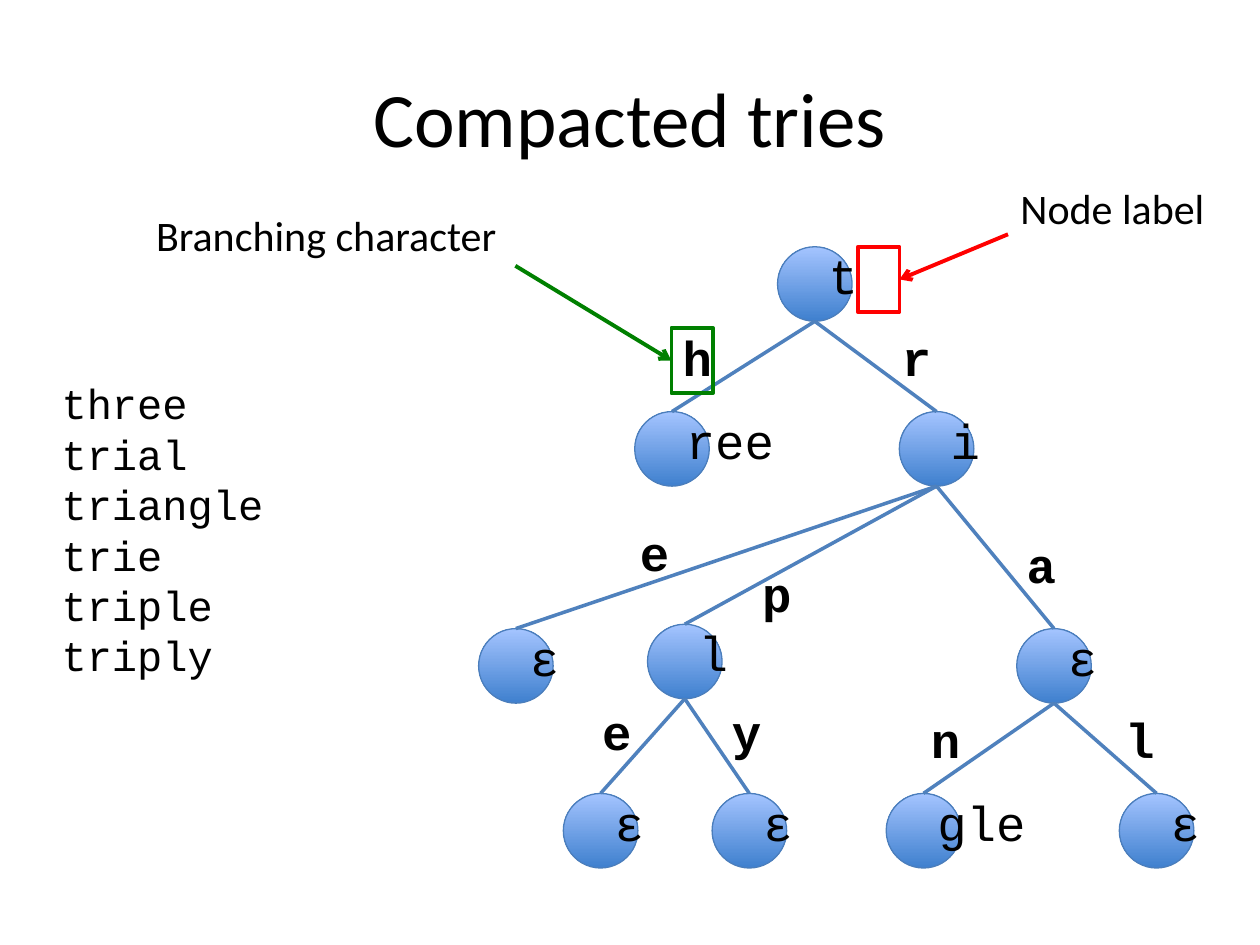
from lxml import etree
from pptx import Presentation
from pptx import util as u
from pptx.dml.color import RGBColor
from pptx.enum import shapes, text
from pptx.oxml import ns

Pt = u.Pt


class Theme:
    ink = RGBColor(0x00, 0x00, 0x00)
    edge = RGBColor(0x4F, 0x81, 0xBD)
    rim = RGBColor(0x4B, 0x7E, 0xBC)
    node_dark = RGBColor(0x3F, 0x80, 0xCE)
    node_light = RGBColor(0xA4, 0xC4, 0xFF)
    red = RGBColor(0xFF, 0x00, 0x00)
    green = RGBColor(0x00, 0x80, 0x00)
    sans, mono = "Calibri", "Courier New"
    title_size, key_size, note_size = 44, 28, 24


def write(frame, lines, font, size, bold=False, align=text.PP_ALIGN.LEFT):
    for index, line in enumerate(lines):
        paragraph = frame.add_paragraph() if index else frame.paragraphs[0]
        paragraph.alignment = align
        run = paragraph.add_run()
        run.text = line
        run.font.name = font
        run.font.size = Pt(size)
        run.font.bold = bold
        run.font.color.rgb = Theme.ink


def draw_line(parent, start, end, color, width):
    line = parent.add_connector(shapes.MSO_CONNECTOR.STRAIGHT, *map(Pt, start + end))
    line.line.color.rgb = color
    line.line.width = Pt(width)
    etree.SubElement(line._element.spPr, ns.qn("a:effectLst"))
    return line


deck = Presentation()
deck.slide_width, deck.slide_height = Pt(720), Pt(540)
slide = deck.slides.add_slide(deck.slide_layouts[5])

title = slide.shapes.title
title.left, title.top, title.width, title.height = Pt(36), Pt(21.6), Pt(648), Pt(90)
title.text_frame.vertical_anchor = text.MSO_ANCHOR.MIDDLE
write(title.text_frame, ["Compacted tries"], Theme.sans, Theme.title_size,
      align=text.PP_ALIGN.CENTER)

words = slide.shapes.add_textbox(Pt(28.1), Pt(212.4), Pt(157.7), Pt(181.4)).text_frame
words.word_wrap = True
words.auto_size = text.MSO_AUTO_SIZE.SHAPE_TO_FIT_TEXT
write(words, ["three", "trial", "triangle", "trie", "triple", "triply"],
      Theme.mono, Theme.note_size)

diameter = 42.6
trie = {
    "t": ("t", 444.3, 141),
    "tri": ("i", 513.9, 235.2),
    "three": ("ree", 362.7, 235.2),
    "tria": ("ε", 581, 359.2),
    "trie": ("ε", 273.5, 359.2),
    "tripl": ("l", 370, 356.7),
    "triply": ("ε", 406.9, 453.4),
    "triple": ("ε", 321.9, 453.4),
    "trial": ("ε", 639.6, 453.4),
    "triangle": ("gle", 506.4, 453.4),
}
nodes = {}
for prefix, (label, left, top) in trie.items():
    node = slide.shapes.add_shape(shapes.MSO_SHAPE.OVAL, Pt(left), Pt(top),
                                  Pt(diameter), Pt(diameter))
    node.shadow.inherit = False
    node.fill.gradient()
    node.fill.gradient_angle = 90
    for stop, color, position in zip(node.fill.gradient_stops,
                                     (Theme.node_dark, Theme.node_light), (0, 1)):
        stop.color.rgb = color
        stop.position = position
    node.line.color.rgb = Theme.rim
    node.line.width = Pt(0.75)
    frame = node.text_frame
    frame.word_wrap = False
    frame.vertical_anchor = text.MSO_ANCHOR.BOTTOM
    frame.margin_left, frame.margin_top = Pt(62.6), Pt(2.9)
    frame.margin_right, frame.margin_bottom = Pt(7.2), Pt(3.6)
    write(frame, [label], Theme.mono, Theme.key_size)
    nodes[prefix] = node

branches = [
    ("t", "three", "h", 383, 183.6),
    ("t", "tri", "r", 508.3, 183.6),
    ("tri", "trie", "e", 358.6, 295.2),
    ("tri", "tripl", "p", 428.4, 318.2),
    ("tri", "tria", "a", 579.6, 301.7),
    ("tria", "trial", "l", 635.8, 401.8),
    ("tria", "triangle", "n", 524.9, 401.8),
    ("tripl", "triply", "y", 411.1, 397.4),
    ("tripl", "triple", "e", 337, 397.4),
]
for parent, child, character, left, top in branches:
    _, parent_left, parent_top = trie[parent]
    _, child_left, child_top = trie[child]
    edge = draw_line(slide.shapes,
                     (parent_left + diameter / 2, parent_top + diameter),
                     (child_left + diameter / 2, child_top), Theme.edge, 2)
    edge.end_connect(nodes[child], 0)

for parent, child, character, left, top in branches:
    frame = slide.shapes.add_textbox(Pt(left), Pt(top), Pt(31.7), Pt(41.2)).text_frame
    frame.word_wrap = False
    frame.auto_size = text.MSO_AUTO_SIZE.SHAPE_TO_FIT_TEXT
    write(frame, [character], Theme.mono, Theme.key_size, bold=True)

marker_width, marker_height = 23.8, 37.4
callouts = [
    ("Node label", Theme.red, (490.2, 141), (576, 133.9), 3, (576, 100.8, 121)),
    ("Branching character", Theme.green, (383.6, 187.3), (294.5, 151.9), 1,
     (82.1, 115.9, 212.4)),
]
for caption, color, (left, top), start, side, (note_left, note_top, note_width) in callouts:
    callout = slide.shapes.add_group_shape().shapes
    marker = callout.add_shape(shapes.MSO_SHAPE.RECTANGLE, Pt(left), Pt(top),
                               Pt(marker_width), Pt(marker_height))
    marker.shadow.inherit = False
    marker.fill.background()
    marker.line.color.rgb = color
    marker.line.width = Pt(2)
    end = (left + marker_width * (side == 3), top + marker_height / 2)
    arrow = draw_line(callout, start, end, color, 2.25)
    arrow.end_connect(marker, side)
    etree.SubElement(arrow.line._get_or_add_ln(), ns.qn("a:tailEnd"), type="arrow")
    frame = callout.add_textbox(Pt(note_left), Pt(note_top), Pt(note_width), Pt(36)).text_frame
    frame.word_wrap = False
    frame.auto_size = text.MSO_AUTO_SIZE.SHAPE_TO_FIT_TEXT
    write(frame, [caption], Theme.sans, Theme.note_size)

deck.save("out.pptx")
